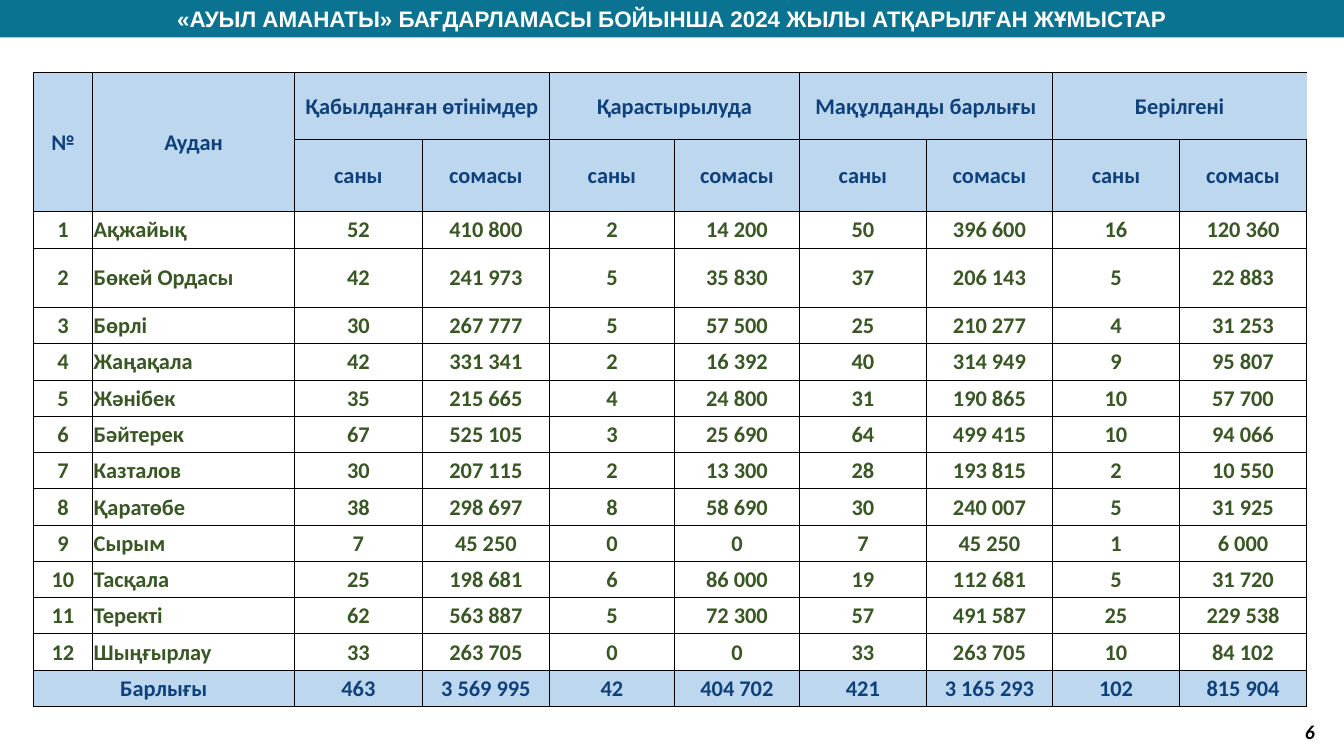
from lxml.etree import SubElement
from pptx import Presentation
from pptx.dml.color import RGBColor
from pptx.enum.text import MSO_ANCHOR as ANCHOR, PP_ALIGN as ALIGN
from pptx.oxml.ns import qn
from pptx.util import Inches, Pt

COLORS = {"banner": "0A7391", "head": "BDD7EE", "navy": "0E417C", "green": "385723",
          "white": "FFFFFF", "black": "000000"}

TITLE = "«АУЫЛ АМАНАТЫ» БАҒДАРЛАМАСЫ БОЙЫНША 2024 ЖЫЛЫ АТҚАРЫЛҒАН ЖҰМЫСТАР"
GROUPS = ["Қабылданған өтінімдер", "Қарастырылуда", "Мақұлданды барлығы", "Берілгені"]
DISTRICTS = [
    ["Ақжайық", "52", "410 800", "2", "14 200", "50", "396 600", "16", "120 360"],
    ["Бөкей Ордасы", "42", "241 973", "5", "35 830", "37", "206 143", "5", "22 883"],
    ["Бөрлі", "30", "267 777", "5", "57 500", "25", "210 277", "4", "31 253"],
    ["Жаңақала", "42", "331 341", "2", "16 392", "40", "314 949", "9", "95 807"],
    ["Жәнібек", "35", "215 665", "4", "24 800", "31", "190 865", "10", "57 700"],
    ["Бәйтерек", "67", "525 105", "3", "25 690", "64", "499 415", "10", "94 066"],
    ["Казталов", "30", "207 115", "2", "13 300", "28", "193 815", "2", "10 550"],
    ["Қаратөбе", "38", "298 697", "8", "58 690", "30", "240 007", "5", "31 925"],
    ["Сырым", "7", "45 250", "0", "0", "7", "45 250", "1", "6 000"],
    ["Тасқала", "25", "198 681", "6", "86 000", "19", "112 681", "5", "31 720"],
    ["Теректі", "62", "563 887", "5", "72 300", "57", "491 587", "25", "229 538"],
    ["Шыңғырлау", "33", "263 705", "0", "0", "33", "263 705", "10", "84 102"],
]
TOTALS = ["463", "3 569 995", "42", "404 702", "421", "3 165 293", "102", "815 904"]

COL_WIDTHS = [0.59, 2, 1.27, 1.26, 1.24, 1.24, 1.26, 1.25, 1.26, 1.26]
ROW_HEIGHTS = [0.66, 0.72, 0.36, 0.59] + [0.36] * 11


def rgb(name):
    return RGBColor.from_string(COLORS[name])


def format_text(p, font, size, color, align, italic=False):
    p.alignment = align
    p.font.name, p.font.size = font, Pt(size)
    p.font.bold, p.font.italic = True, italic
    p.font.color.rgb = rgb(color)


def add_banner(slide, left, top, width, height):
    sp = slide.shapes.title
    sp.left, sp.top, sp.width, sp.height = map(Inches, (left, top, width, height))
    sp.fill.solid()
    sp.fill.fore_color.rgb = rgb("banner")
    tf = sp.text_frame
    tf.text = TITLE
    tf.vertical_anchor = ANCHOR.MIDDLE
    tf.margin_top = tf.margin_bottom = 0
    format_text(tf.paragraphs[0], "Arial", 16, "white", ALIGN.CENTER)


def set_borders(cell, open_right):
    tcPr = cell._tc.get_or_add_tcPr()
    for i, side in enumerate("LRTB"):
        ln = SubElement(tcPr, qn(f"a:ln{side}"), w=str(Pt(0.5)))
        if side == "R" and open_right:
            SubElement(ln, qn("a:noFill"))
        else:
            fill = SubElement(ln, qn("a:solidFill"))
            SubElement(fill, qn("a:srgbClr"), val=COLORS["black"])
        tcPr.insert(i, ln)  # borders come before the cell fill


def format_cell(cell, row, col, is_head):
    cell.fill.solid()
    cell.fill.fore_color.rgb = rgb("head" if is_head else "white")
    cell.vertical_anchor = ANCHOR.MIDDLE
    cell.margin_left = cell.margin_right = cell.margin_top = Inches(0.01)
    cell.margin_bottom = 0
    align = ALIGN.LEFT if col == 1 and not is_head else ALIGN.CENTER
    format_text(cell.text_frame.paragraphs[0], "Calibri", 16,
                "navy" if is_head else "green", align)
    # The last group heading is open on its right side
    set_borders(cell, open_right=row == 0 and col >= len(COL_WIDTHS) - 2)


def add_district_table(slide, left, top, width, height):
    # Two heading rows, the numbered districts, then the totals
    rows = [["№", "Аудан"] + [text for group in GROUPS for text in (group, "")],
            ["", ""] + ["саны", "сомасы"] * len(GROUPS)]
    rows += [[str(n)] + district for n, district in enumerate(DISTRICTS, 1)]
    rows.append(["Барлығы", ""] + TOTALS)
    last = len(rows) - 1

    table = slide.shapes.add_table(len(rows), len(COL_WIDTHS), Inches(left), Inches(top),
                                   Inches(width), Inches(height)).table
    table.first_row = table.horz_banding = False
    for column, size in zip(table.columns, COL_WIDTHS):
        column.width = Inches(size)
    for row, size in zip(table.rows, ROW_HEIGHTS):
        row.height = Inches(size)

    for r, texts in enumerate(rows):
        for c, text in enumerate(texts):
            cell = table.cell(r, c)
            cell.text = text
            format_cell(cell, r, c, is_head=r < 2 or r == last)

    # Joined cells
    for c in (0, 1):
        table.cell(0, c).merge(table.cell(1, c))
    for c in range(2, len(COL_WIDTHS), 2):
        table.cell(0, c).merge(table.cell(0, c + 1))
    table.cell(last, 0).merge(table.cell(last, 1))


def add_page_number(slide, left, top, width, height):
    tf = slide.shapes.add_textbox(*map(Inches, (left, top, width, height))).text_frame
    tf.word_wrap = True
    tf.vertical_anchor = ANCHOR.MIDDLE
    tf.text = "6"
    format_text(tf.paragraphs[0], "Calibri", 14, "black", ALIGN.RIGHT, italic=True)


def main():
    prs = Presentation()
    prs.slide_width, prs.slide_height = Inches(13.33), Inches(7.5)
    slide = prs.slides.add_slide(prs.slide_layouts[5])
    add_banner(slide, 0, 0, 13.33, 0.37)
    add_district_table(slide, 0.33, 0.72, sum(COL_WIDTHS), sum(ROW_HEIGHTS))
    add_page_number(slide, 10.14, 7.06, 3, 0.4)
    prs.save("out.pptx")


if __name__ == "__main__":
    main()
